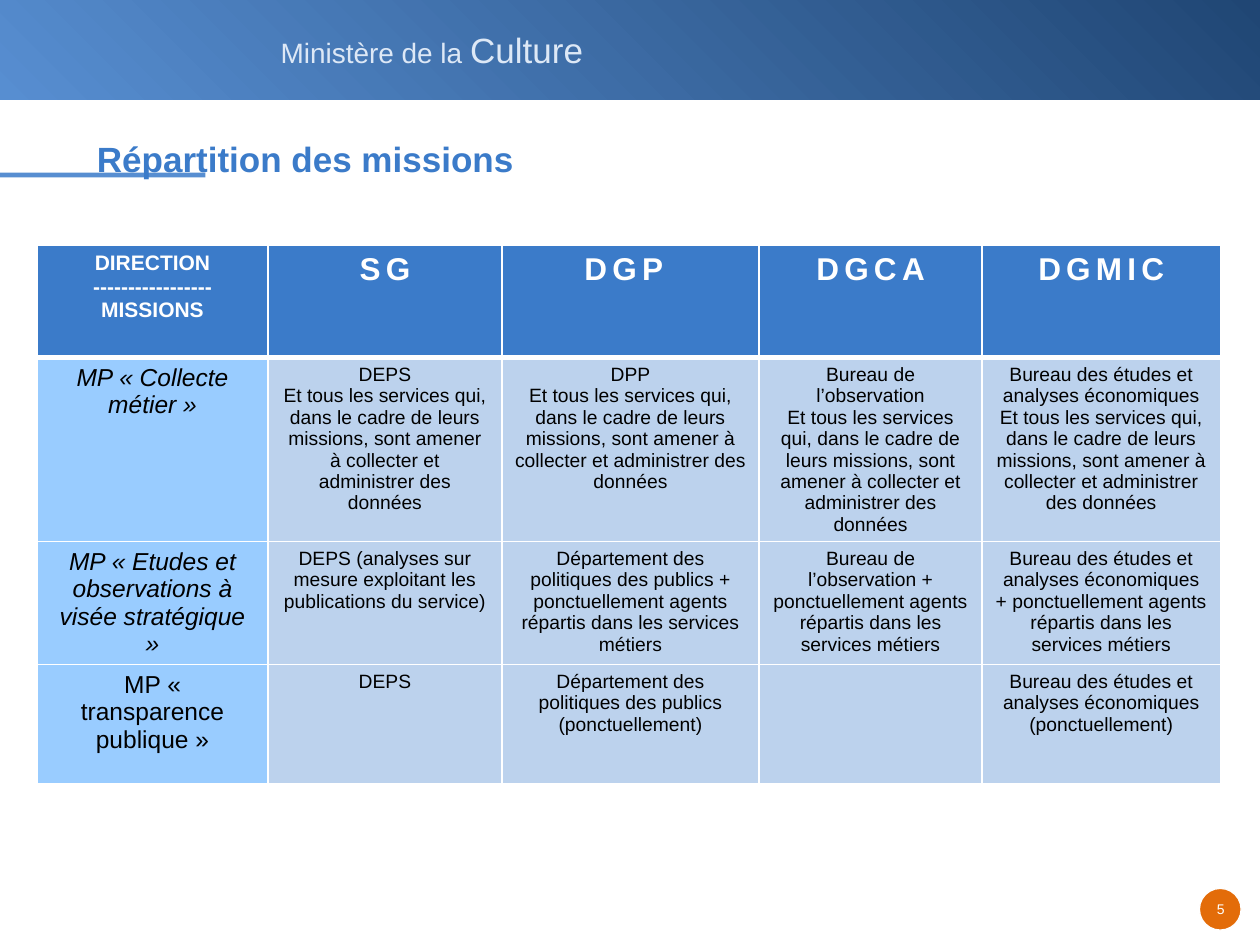
from lxml.etree import SubElement
from pptx import Presentation
from pptx.dml.color import RGBColor
from pptx.enum.shapes import MSO_SHAPE as Preset
from pptx.enum.text import MSO_ANCHOR as Anchor, PP_ALIGN as Align
from pptx.oxml.ns import qn
from pptx.util import Cm, Pt

WHITE = RGBColor(0xFF, 0xFF, 0xFF)
BLACK = RGBColor(0x00, 0x00, 0x00)
NAVY = RGBColor(0x20, 0x46, 0x74)
SKY = RGBColor(0x57, 0x8E, 0xD1)
BLUE = RGBColor(0x3B, 0x7B, 0xC9)
PALE = RGBColor(0xDD, 0xE8, 0xF6)
ORANGE = RGBColor(0xE3, 0x6C, 0x09)
MISSION_FILL = RGBColor(0x99, 0xCC, 0xFF)
BODY_FILL = RGBColor(0xBC, 0xD2, 0xED)

COLLECT = ("Et tous les services qui, dans le cadre de leurs missions, "
           "sont amener à collecter et administrer des données")
AGENTS = "+ ponctuellement agents répartis dans les services métiers"
STUDIES = "Bureau des études et analyses économiques"
PUBLICS = "Département des politiques des publics"
OBSERVATION = "Bureau de l’observation"

HEADERS = ["DIRECTION\n-----------------\nMISSIONS", "SG", "DGP ", "DGCA", "DGMIC"]
MISSIONS = [
    ["MP « Collecte métier »", f"DEPS\n{COLLECT}", f"DPP\n{COLLECT}",
     f"{OBSERVATION}\n{COLLECT}", f"{STUDIES}\n{COLLECT}"],
    ["MP « Etudes et observations à visée stratégique »",
     "DEPS (analyses sur mesure exploitant les publications du service)",
     f"{PUBLICS} {AGENTS}", f"{OBSERVATION} {AGENTS}", f"{STUDIES} {AGENTS}"],
    ["MP « transparence publique »", "DEPS", f"{PUBLICS} (ponctuellement)",
     "", f"{STUDIES} (ponctuellement)"],
]
COLUMN_WIDTHS = [4.65, 4.72, 5.18, 4.5, 4.8]
ROW_HEIGHTS = [2.26, 2.29, 2.41, 2.41]


class SlideBuilder:
    def __init__(self, slide, font_name="Arial"):
        self.slide = slide
        self.font_name = font_name

    def style(self, font, size, color, bold=False, italic=False):
        font.name = self.font_name
        font.size = Pt(size)
        font.color.rgb = color
        font.bold = bold
        font.italic = italic

    def shape(self, preset, left, top, width, height, colors, line=None):
        shape = self.slide.shapes.add_shape(
            preset, Cm(left), Cm(top), Cm(width), Cm(height))
        shape.shadow.inherit = False
        if len(colors) == 2:
            shape.fill.gradient()
            shape.fill.gradient_angle = 225
            for stop, color, position in zip(shape.fill.gradient_stops, colors, (0, 1)):
                stop.color.rgb = color
                stop.position = position
        else:
            shape.fill.solid()
            shape.fill.fore_color.rgb = colors[0]
        if line:
            shape.line.color.rgb = line
            shape.line.width = Pt(0.75)
        else:
            shape.line.fill.background()

    def text(self, left, top, width, height, runs, color, align=Align.LEFT):
        box = self.slide.shapes.add_textbox(Cm(left), Cm(top), Cm(width), Cm(height))
        box.text_frame.word_wrap = False
        paragraph = box.text_frame.paragraphs[0]
        paragraph.alignment = align
        for words, size in runs:
            run = paragraph.add_run()
            run.text = words
            self.style(run.font, size, color)

    def title(self, left, top, width, height, words):
        title = self.slide.shapes.title
        title.left, title.top = Cm(left), Cm(top)
        title.width, title.height = Cm(width), Cm(height)
        self.slide.shapes.element.append(title.element)  # above the accent bar
        frame = title.text_frame
        frame.text = words
        frame.vertical_anchor = Anchor.TOP
        paragraph = frame.paragraphs[0]
        paragraph.alignment = Align.LEFT
        paragraph.line_spacing = Pt(28)
        self.style(paragraph.font, 20, BLUE, bold=True)

    def border(self, cell, side, width):
        line = SubElement(cell._tc.get_or_add_tcPr(), qn(f"a:ln{side}"),
                          w=str(Pt(width)))
        fill = SubElement(line, qn("a:solidFill"))
        SubElement(fill, qn("a:srgbClr"), val=str(WHITE))

    def cell(self, cell, words, fill, size, color, widths,
             bold=False, italic=False, spacing=0):
        for side, width in zip("LRTB", widths):
            self.border(cell, side, width)
        cell.fill.solid()
        cell.fill.fore_color.rgb = fill
        cell.text = words
        for paragraph in cell.text_frame.paragraphs:
            paragraph.alignment = Align.CENTER
            self.style(paragraph.font, size, color, bold, italic)
            if spacing:
                for run in paragraph.runs:
                    run._r.get_or_add_rPr().set("spc", str(spacing * 100))

    def table(self, left, top, headers, rows, column_widths, row_heights):
        table = self.slide.shapes.add_table(
            len(row_heights), len(column_widths), Cm(left), Cm(top),
            Cm(sum(column_widths)), Cm(sum(row_heights))).table
        for column, width in zip(table.columns, column_widths):
            column.width = Cm(width)
        for row, height in zip(table.rows, row_heights):
            row.height = Cm(height)
        thin, thick = 0.96, 3
        for j, words in enumerate(headers):
            self.cell(table.cell(0, j), words, BLUE, 18 if j else 12, WHITE,
                      (thin, thin, thin, thick), bold=True, spacing=3 if j else 0)
        for i, row in enumerate(rows, start=1):
            widths = (thin, thin, thick if i == 1 else thin, thin)
            for j, words in enumerate(row):
                self.cell(table.cell(i, j), words, BODY_FILL if j else MISSION_FILL,
                          11 if j else 14, BLACK, widths,
                          italic=j == 0 and i < len(rows))


def main():
    presentation = Presentation()
    presentation.slide_width, presentation.slide_height = Cm(25.4), Cm(19.05)
    builder = SlideBuilder(
        presentation.slides.add_slide(presentation.slide_layouts[5]))

    # Header band
    builder.shape(Preset.RECTANGLE, 0, 0, 25.4, 2.01, [NAVY, SKY])
    builder.text(5.41, 0.46, 6.6, 1.09,
                 [("Ministère de la ", 16), ("Culture", 20)], PALE)

    # Title with accent bar
    builder.shape(Preset.RECTANGLE, 0, 3.48, 4.14, 0.1, [SKY])
    builder.title(1.7, 2.51, 23.47, 0.99, "Répartition des missions")

    # Missions by direction
    builder.table(0.75, 4.95, HEADERS, MISSIONS, COLUMN_WIDTHS, ROW_HEIGHTS)

    # Page number
    builder.shape(Preset.OVAL, 24.18, 17.91, 0.84, 0.84, [ORANGE], WHITE)
    builder.text(23.85, 18.03, 1.52, 0.58, [("5", 8)], WHITE, Align.CENTER)

    presentation.save("out.pptx")


if __name__ == "__main__":
    main()
